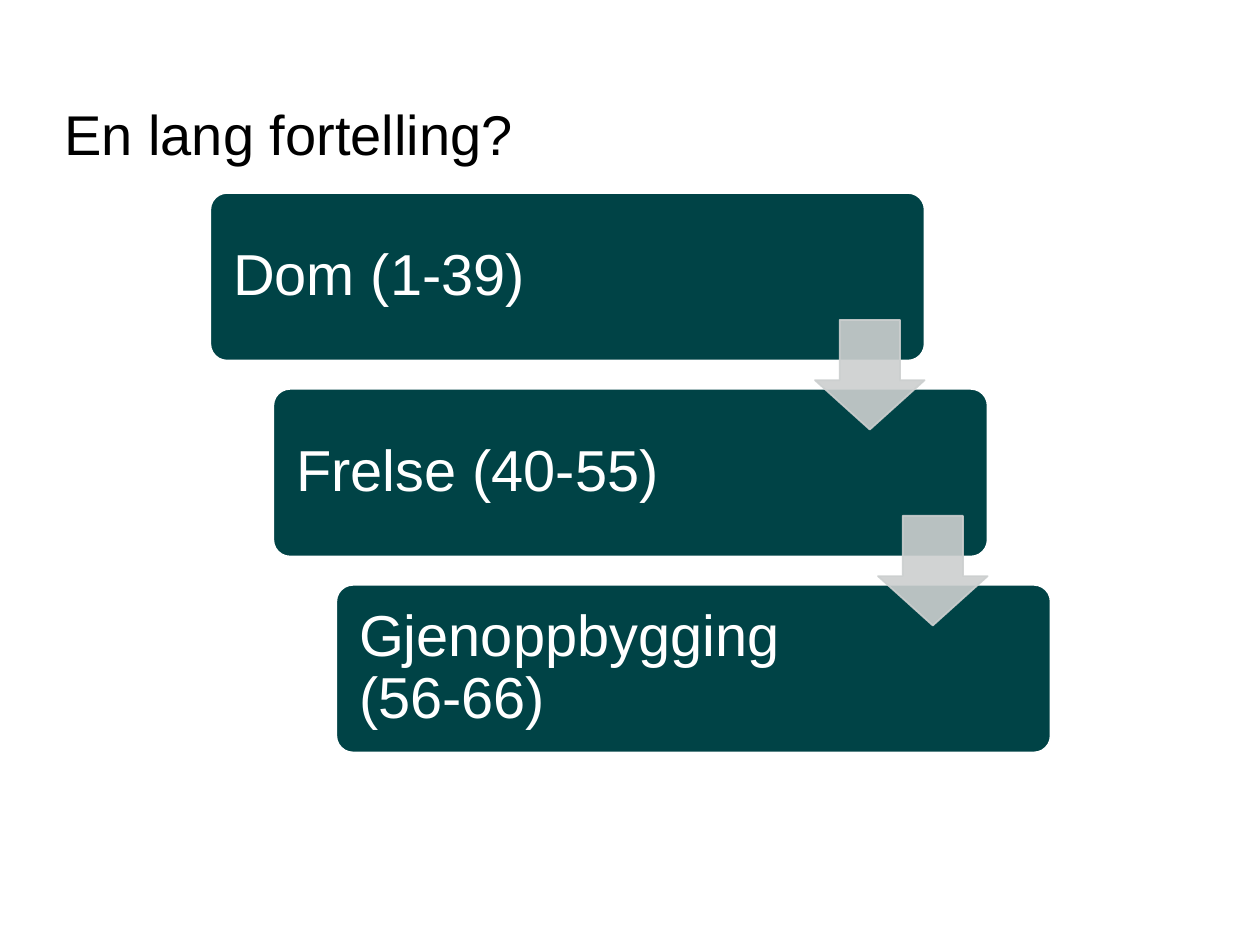
from lxml.etree import SubElement
from pptx import Presentation
from pptx.dml.color import RGBColor
from pptx.enum.shapes import MSO_SHAPE
from pptx.enum.text import MSO_ANCHOR, PP_ALIGN
from pptx.oxml.ns import qn
from pptx.util import Cm, Pt

TITLE = "En lang fortelling?"
STAGES = ["Dom (1-39)", "Frelse (40-55)", "Gjenoppbygging (56-66)"]
COLORS = {"stage": "004346", "arrow": "CCCFCF", "white": "FFFFFF", "black": "000000"}

# Staircase geometry in cm
LEFT, TOP = 4.24, 3.89
STEP_X, STEP_Y = 1.27, 3.95
STAGE_W, STAGE_H = 14.4, 3.38
LABEL_W, LABEL_GAP = 10.73, 0.1
ARROW_SIZE, ARROW_DX, ARROW_DY = 2.21, 12.19, 2.56

presentation = Presentation()
presentation.slide_width, presentation.slide_height = Cm(25.4), Cm(19.05)
slide = presentation.slides.add_slide(presentation.slide_layouts[6])


def add_text(text, left, top, width, height, *, size, color, inset=0,
             anchor=MSO_ANCHOR.TOP):
    box = slide.shapes.add_textbox(Cm(left), Cm(top), Cm(width), Cm(height))
    frame = box.text_frame
    frame.word_wrap = True
    frame.vertical_anchor = anchor
    frame.margin_left = frame.margin_right = Cm(inset)
    frame.margin_top = frame.margin_bottom = Cm(inset)
    paragraph = frame.paragraphs[0]
    paragraph.text = text
    paragraph.alignment = PP_ALIGN.LEFT
    paragraph.line_spacing = 0.9
    paragraph.font.name = "Arial"
    paragraph.font.size = Pt(size)
    paragraph.font.color.rgb = RGBColor.from_string(COLORS[color])


def add_block(preset, left, top, width, height, *, fill, line, adjustments, opacity=100):
    block = slide.shapes.add_shape(preset, Cm(left), Cm(top), Cm(width), Cm(height))
    block.shadow.inherit = False
    for index, value in enumerate(adjustments):
        block.adjustments[index] = value
    block.line.width = Pt(1)
    for paint, color in ((block.fill, fill), (block.line.fill, line)):
        paint.solid()
        paint.fore_color.rgb = RGBColor.from_string(COLORS[color])
    if opacity < 100:
        for rgb in block.element.spPr.iter(qn("a:srgbClr")):
            SubElement(rgb, qn("a:alpha"), val=str(opacity * 1000))


# Title
add_text(TITLE, 1.3, 2.16, 21.44, 2.67, size=32, color="black")

# Stages, each one step right and down from the last
corners = [(LEFT + i * STEP_X, TOP + i * STEP_Y) for i in range(len(STAGES))]
for stage, (x, y) in zip(STAGES, corners):
    add_block(MSO_SHAPE.ROUNDED_RECTANGLE, x, y, STAGE_W, STAGE_H,
              fill="stage", line="white", adjustments=[0.1])
    add_text(stage, x + LABEL_GAP, y + LABEL_GAP, LABEL_W, STAGE_H - 2 * LABEL_GAP,
             size=33, color="white", inset=0.36, anchor=MSO_ANCHOR.MIDDLE)

# Arrows from each stage to the next
for x, y in corners[:-1]:
    add_block(MSO_SHAPE.DOWN_ARROW, x + ARROW_DX, y + ARROW_DY, ARROW_SIZE, ARROW_SIZE,
              fill="arrow", line="arrow", adjustments=[0.55, 0.45], opacity=90)

presentation.save("out.pptx")
